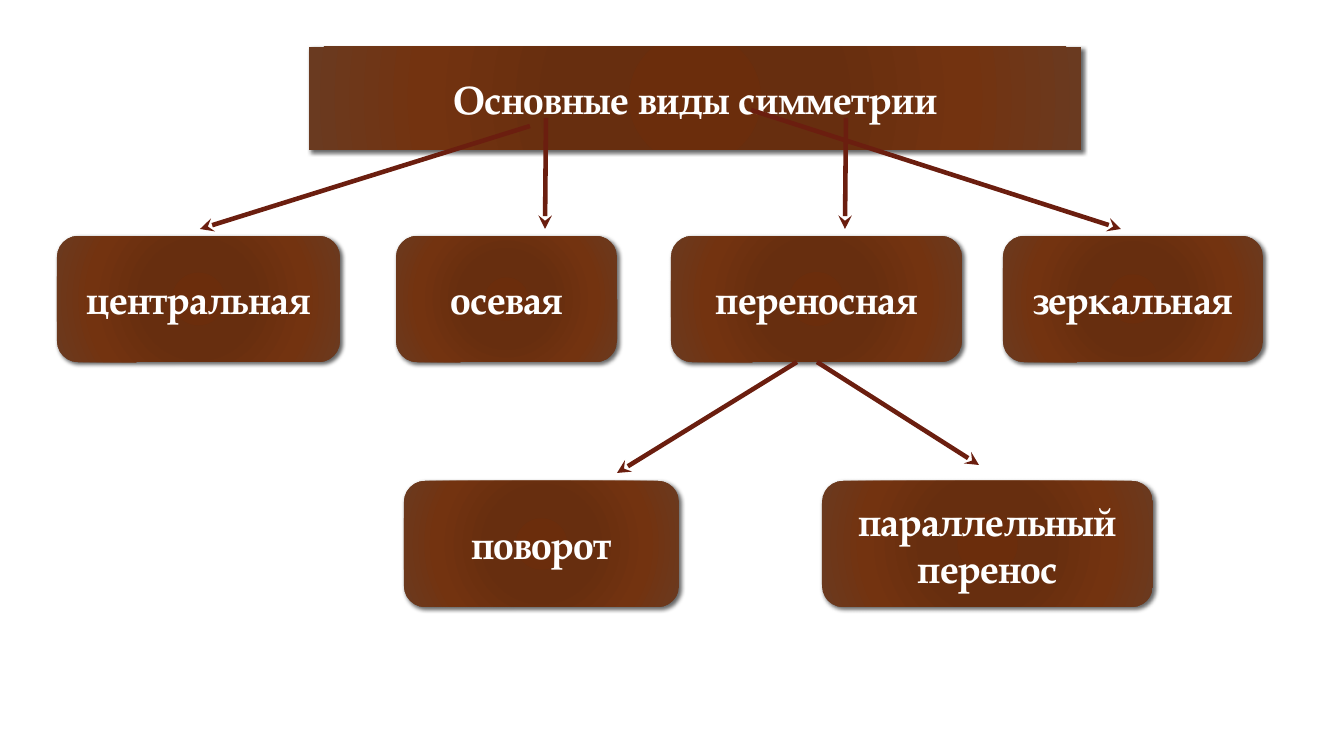
import dataclasses

import pptx
import pptx.dml.color
import pptx.enum.shapes
import pptx.enum.text
import pptx.oxml
import pptx.oxml.ns
import pptx.util
from lxml import etree

EMU_PER_PX = 914400 / 100.8
DRAWING_NS = pptx.oxml.ns.nsdecls("a")


@dataclasses.dataclass(frozen=True)
class Theme:
    font: str = "TeX Gyre Pagella"
    text_size: int = 28
    text_color: str = "FFFFFF"
    arrow_color: str = "6B1E0F"
    arrow_width: float = 3.25
    shadow_color: str = "000000"
    box_stops: tuple = ((0, "6B2D0C"), (34, "672E0F"), (70, "733310"), (100, "6A3A20"))


THEME = Theme()

HEADING = ("Основные виды симметрии", 309, 772)
HEADING_TOP, HEADING_HEIGHT = 47, 103
BOX_HEIGHT = 126
# Top of each row, then the text, left and width of its boxes.
ROWS = (
    (236, (
        ("центральная", 57, 283),
        ("осевая", 396, 221),
        ("переносная", 671, 291),
        ("зеркальная", 1003, 260),
    )),
    (481, (
        ("поворот", 404, 275),
        ("параллельный перенос", 822, 331),
    )),
)
ARROWS = (
    ((530, 126), (200, 229)),
    ((797, 362), (617, 473)),
    ((846, 118), (845, 229)),
    ((546, 118), (545, 229)),
    ((751, 110), (1121, 229)),
    ((817, 362), (979, 465)),
)


def px(length):
    return pptx.util.Emu(round(length * EMU_PER_PX))


def write_text(shape, text, *, size=THEME.text_size, color=THEME.text_color, bold=True):
    frame = shape.text_frame
    frame.word_wrap = True
    frame.auto_size = pptx.enum.text.MSO_AUTO_SIZE.NONE
    frame.vertical_anchor = pptx.enum.text.MSO_ANCHOR.MIDDLE
    paragraph = frame.paragraphs[0]
    paragraph.alignment = pptx.enum.text.PP_ALIGN.CENTER
    run = paragraph.add_run()
    run.text = text
    run.font.name = THEME.font
    run.font.size = pptx.util.Pt(size)
    run.font.bold = bold
    run.font.color.rgb = pptx.dml.color.RGBColor.from_string(color)


def style_box(shape):
    """Give the box its radial gradient and soft shadow, without an outline."""
    stops = "".join(
        f'<a:gs pos="{percent * 1000}"><a:srgbClr val="{color}"/></a:gs>'
        for percent, color in THEME.box_stops
    )
    gradient = pptx.oxml.parse_xml(
        f'<a:gradFill {DRAWING_NS} rotWithShape="1"><a:gsLst>{stops}</a:gsLst>'
        '<a:path path="circle">'
        '<a:fillToRect l="100000" t="100000" r="100000" b="100000"/>'
        '</a:path></a:gradFill>'
    )
    shadow = pptx.oxml.parse_xml(
        f'<a:outerShdw {DRAWING_NS} blurRad="{pptx.util.Pt(3)}" dist="{pptx.util.Pt(2)}"'
        ' dir="2700000" algn="tl" rotWithShape="0">'
        f'<a:srgbClr val="{THEME.shadow_color}"><a:alpha val="60000"/></a:srgbClr>'
        '</a:outerShdw>'
    )
    shape.line.fill.background()
    shape.shadow.inherit = False
    properties = shape._element.spPr
    properties.find(pptx.oxml.ns.qn("a:prstGeom")).addnext(gradient)
    properties.find(pptx.oxml.ns.qn("a:effectLst")).append(shadow)


def add_heading(slide):
    text, left, width = HEADING
    heading = slide.shapes.title
    heading.left, heading.top = px(left), px(HEADING_TOP)
    heading.width, heading.height = px(width), px(HEADING_HEIGHT)
    outline = pptx.oxml.parse_xml(
        f'<a:prstGeom {DRAWING_NS} prst="roundRect"><a:avLst/></a:prstGeom>'
    )
    heading._element.spPr.find(pptx.oxml.ns.qn("a:xfrm")).addnext(outline)
    style_box(heading)
    write_text(heading, text)


def add_box(slide, text, left, top, width):
    box = slide.shapes.add_shape(
        pptx.enum.shapes.MSO_SHAPE.ROUNDED_RECTANGLE,
        px(left), px(top), px(width), px(BOX_HEIGHT),
    )
    style_box(box)
    write_text(box, text)


def add_arrow(slide, start, end):
    arrow = slide.shapes.add_connector(
        pptx.enum.shapes.MSO_CONNECTOR.STRAIGHT, *map(px, start + end)
    )
    arrow.line.color.rgb = pptx.dml.color.RGBColor.from_string(THEME.arrow_color)
    arrow.line.width = pptx.util.Pt(THEME.arrow_width)
    outline = arrow.line._get_or_add_ln()
    etree.SubElement(outline, pptx.oxml.ns.qn("a:tailEnd"), type="stealth")
    etree.SubElement(arrow._element.spPr, pptx.oxml.ns.qn("a:effectLst"))


def main():
    presentation = pptx.Presentation()
    presentation.slide_width, presentation.slide_height = px(1344), px(756)
    slide = presentation.slides.add_slide(presentation.slide_layouts.get_by_name("Title Only"))
    add_heading(slide)
    for top, boxes in ROWS:
        for text, left, width in boxes:
            add_box(slide, text, left, top, width)
    for start, end in ARROWS:
        add_arrow(slide, start, end)
    presentation.save("out.pptx")


if __name__ == "__main__":
    main()
